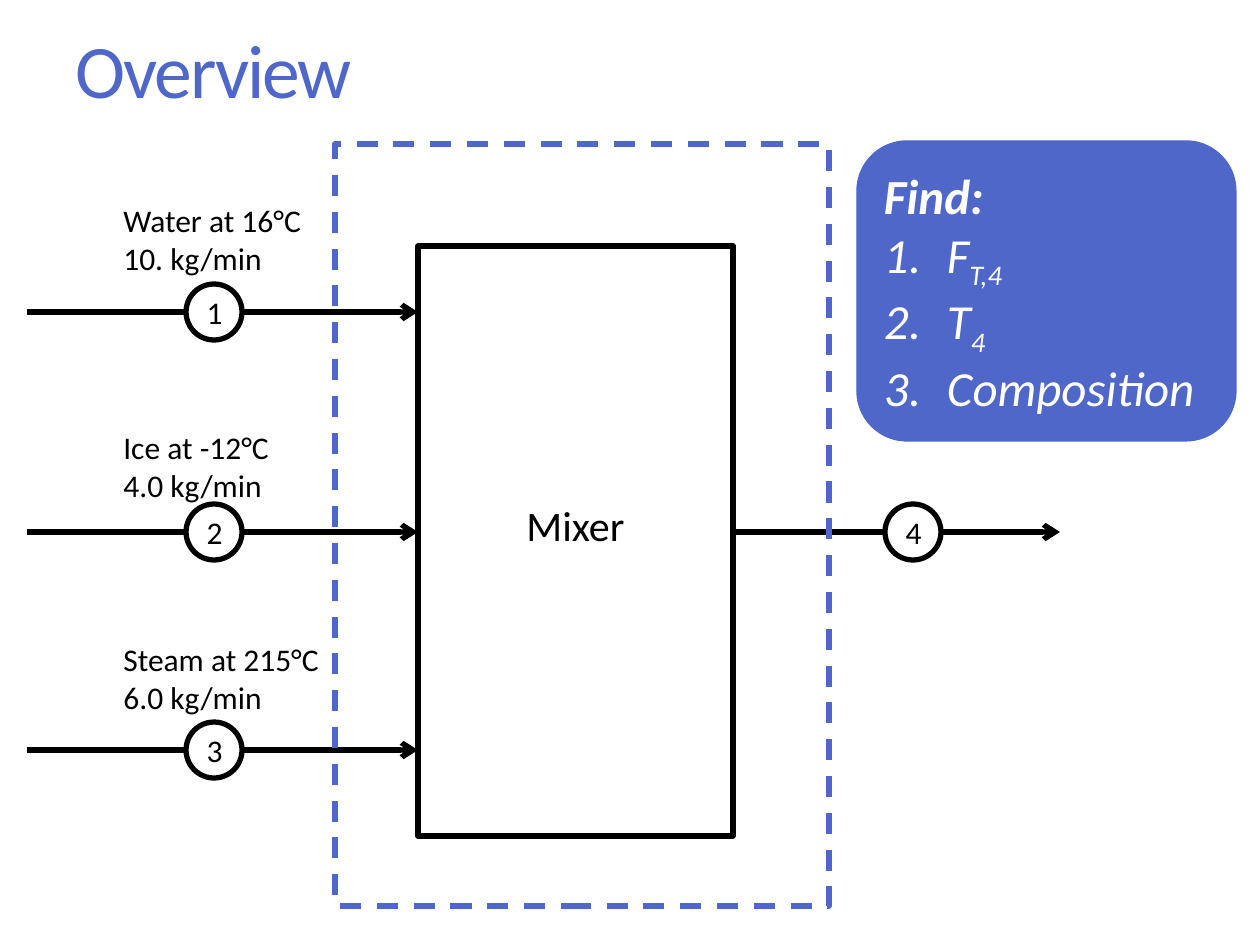
"""Build the mixer overview slide with its streams and the quantities to find."""
import pptx
import pptx.chart.data
import pptx.dml.color
import pptx.enum.dml
import pptx.enum.shapes
import pptx.enum.text
import pptx.oxml.ns
import pptx.util
import lxml.etree

SCALE = 914400 / 126
COLORS = {"accent": "4E67C8", "ink": "000000", "paper": "FFFFFF"}
SHAPES = pptx.enum.shapes.MSO_SHAPE
MIDDLE = pptx.enum.text.MSO_ANCHOR.MIDDLE
qn = pptx.oxml.ns.qn

deck = pptx.Presentation()
deck.slide_width, deck.slide_height = round(1260 * SCALE), round(945 * SCALE)
page = deck.slides.add_slide(deck.slide_layouts[6])


def add_box(kind, bounds, fill=None, line=None, width=3):
    lengths = [round(length * SCALE) for length in bounds]
    if kind is None:
        box = page.shapes.add_textbox(*lengths)
    else:
        box = page.shapes.add_shape(kind, *lengths)
        box.shadow.inherit = False
        if fill:
            box.fill.solid()
            box.fill.fore_color.rgb = pptx.dml.color.RGBColor.from_string(COLORS[fill])
        else:
            box.fill.background()
        box.line.color.rgb = pptx.dml.color.RGBColor.from_string(COLORS[line])
        box.line.width = pptx.util.Pt(width)
    box.text_frame.word_wrap = True
    return box


def write(box, lines, size, color="ink", align=pptx.enum.text.PP_ALIGN.LEFT):
    for index, line in enumerate(lines):
        frame = box.text_frame
        para = frame.paragraphs[0] if index == 0 else frame.add_paragraph()
        para.alignment = align
        para.font.name = "Calibri"
        para.font.size = pptx.util.Pt(size)
        para.font.color.rgb = pptx.dml.color.RGBColor.from_string(COLORS[color])
        para.add_run().text = line
    return box.text_frame.paragraphs


title = add_box(None, (63, 38, 1134, 72))
title.text_frame.vertical_anchor = MIDDLE
heading = write(title, ["Overview"], 43.2, "accent")[0]
heading.line_spacing = 0.9
heading.runs[0]._r.get_or_add_rPr().set("spc", "-120")

add_box(SHAPES.RECTANGLE, (418, 246, 315, 590), line="ink")

streams = [
    ("1", 27, 418, 312, 214),
    ("2", 27, 418, 532, 214),
    ("3", 27, 418, 750, 214),
    ("4", 733, 1060, 532, 913),
]
for number, start, end, y, center in streams:
    arrow = page.shapes.add_connector(
        pptx.enum.shapes.MSO_CONNECTOR.STRAIGHT,
        *[round(length * SCALE) for length in (start, y, end, y)])
    arrow.line.color.rgb = pptx.dml.color.RGBColor.from_string(COLORS["ink"])
    arrow.line.width = pptx.util.Pt(3)
    lxml.etree.SubElement(arrow.line._get_or_add_ln(), qn("a:tailEnd"), type="arrow")
    lxml.etree.SubElement(arrow._element.spPr, qn("a:effectLst"))
    badge = add_box(SHAPES.OVAL, (center - 28, y - 28, 56, 56), "paper", "ink")
    badge.text_frame.vertical_anchor = MIDDLE
    write(badge, [number], 18, align=pptx.enum.text.PP_ALIGN.CENTER)

write(add_box(None, (514, 493, 141, 64)), ["Mixer"], 24)

feeds = [
    (195, "Water at 16°C", "10. kg/min"),
    (422, "Ice at -12°C", "4.0 kg/min"),
    (634, "Steam at 215°C", "6.0 kg/min"),
]
for top, material, rate in feeds:
    write(add_box(None, (111, top, 226, 89)), [material, rate], 18)

boundary = add_box(SHAPES.RECTANGLE, (335, 144, 494, 762), line="accent")
boundary.line.dash_style = pptx.enum.dml.MSO_LINE.DASH

goals = add_box(SHAPES.ROUNDED_RECTANGLE, (857, 141, 379, 300), "accent", "accent", 0.75)
goals.text_frame.vertical_anchor = MIDDLE
subscripts = [None, "T,4", "4", None]
paras = write(goals, ["Find:", "F", "T", "Composition"], 28, "paper")
for index, (para, subscript) in enumerate(zip(paras, subscripts)):
    para.font.italic = True
    para.font.bold = index == 0
    if index:
        properties = para._p.get_or_add_pPr()
        properties.set("marL", "457200")
        properties.set("indent", "-457200")
        number = lxml.etree.Element(qn("a:buAutoNum"), type="arabicPeriod")
        properties.insert(0, number)
    if subscript:
        span = para.add_run()
        span.text = subscript
        span._r.get_or_add_rPr().set("baseline", "-25000")

deck.save("out.pptx")
